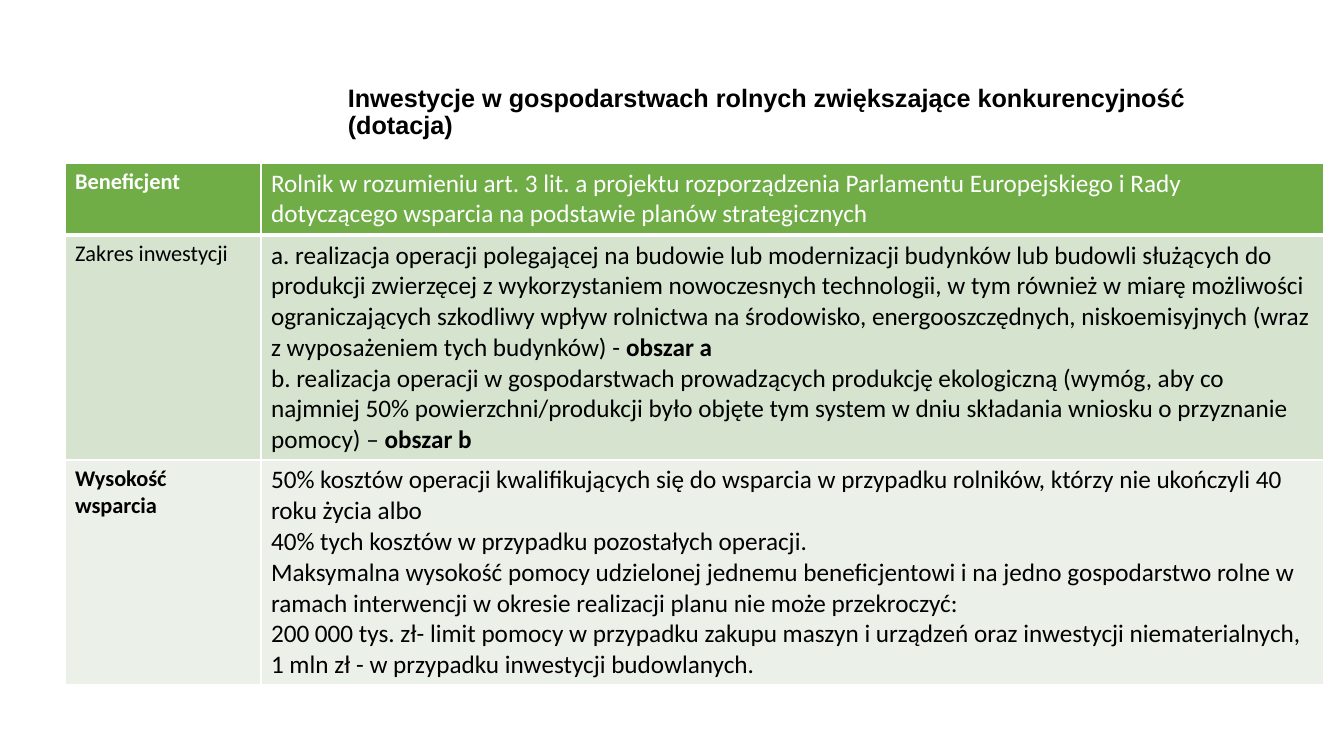
from lxml import etree
from pptx import Presentation
from pptx import util as u
from pptx.dml.color import RGBColor
from pptx.enum import text
from pptx.oxml.ns import qn

PX_PER_INCH = 100.8
WHITE, BLACK, GREEN = "FFFFFF", "000000", "70AD47"
PALE_GREEN, PALEST_GREEN = "D5E3CF", "EBF1E9"


def px(length):
    return u.Emu(round(length * 914400 / PX_PER_INCH))


def colour(value):
    return RGBColor.from_string(value)


def apply(target, values):
    for name, value in values.items():
        setattr(target, name, value)


class SlideBuilder:
    def __init__(self, presentation):
        self.slide = presentation.slides.add_slide(presentation.slide_layouts[6])

    def paragraphs(self, frame, paragraphs, font, ink):
        """Fill a frame; each paragraph is a list of (words, bold) runs."""
        for index, runs in enumerate(paragraphs):
            paragraph = frame.add_paragraph() if index else frame.paragraphs[0]
            for words, bold in runs:
                run = paragraph.add_run()
                run.text = words
                apply(run.font, {**font, "bold": bold})
                run.font.color.rgb = colour(ink)

    def title(self, words, box):
        shape = self.slide.shapes.add_textbox(*map(px, box))
        frame = shape.text_frame
        apply(frame, {"word_wrap": True, "vertical_anchor": text.MSO_ANCHOR.MIDDLE})
        self.paragraphs(frame, [[(words, True)]], {"name": "Arial", "size": u.Pt(18)}, BLACK)
        frame.paragraphs[0].line_spacing = 0.9

    def borders(self, cell, widths):
        """Draw white cell borders, given side letter to width in points."""
        properties = cell._tc.get_or_add_tcPr()
        for side, width in widths.items():
            line = etree.SubElement(properties, qn(f"a:ln{side}"), w=str(u.Pt(width)))
            fill = etree.SubElement(line, qn("a:solidFill"))
            etree.SubElement(fill, qn("a:srgbClr"), val=WHITE)

    def table(self, corner, widths, heights, rows):
        """Draw rows given as (fill, ink, label paragraphs, detail paragraphs)."""
        frame = self.slide.shapes.add_table(
            len(rows), len(widths), *map(px, (*corner, sum(widths), sum(heights))))
        table = frame.table
        for column, width in zip(table.columns, widths):
            column.width = px(width)
        for index, (fill, ink, *contents) in enumerate(rows):
            table.rows[index].height = px(heights[index])
            for cell, content, size in zip(table.rows[index].cells, contents, (16, 18)):
                self.borders(cell, {"L": 1, "R": 1, "T": 3 if index == 1 else 1,
                                    "B": 3 if index == 0 else 1})
                cell.fill.solid()
                cell.fill.fore_color.rgb = colour(fill)
                self.paragraphs(cell.text_frame, content,
                                {"name": "Calibri", "size": u.Pt(size)}, ink)


ROWS = [
    (GREEN, WHITE,
     [[("Beneficjent", True)]],
     [[("Rolnik w rozumieniu art. 3 lit. a projektu rozporządzenia Parlamentu Europejskiego "
        "i Rady dotyczącego wsparcia na podstawie planów strategicznych", False)]]),
    (PALE_GREEN, BLACK,
     [[("Zakres inwestycji", False)]],
     [[("a. realizacja operacji polegającej na budowie lub modernizacji budynków lub budowli "
        "służących do produkcji zwierzęcej z wykorzystaniem nowoczesnych technologii, w tym "
        "również w miarę możliwości ograniczających szkodliwy wpływ rolnictwa na środowisko, "
        "energooszczędnych, niskoemisyjnych (wraz z wyposażeniem tych budynków) - ", False),
       ("obszar a", True)],
      [("b. realizacja operacji w gospodarstwach prowadzących produkcję ekologiczną (wymóg, "
        "aby co najmniej 50% powierzchni/produkcji było objęte tym system w dniu składania "
        "wniosku o przyznanie pomocy) – ", False),
       ("obszar b", True)]]),
    (PALEST_GREEN, BLACK,
     [[("Wysokość wsparcia", True)]],
     [[(words, False)] for words in (
         "50% kosztów operacji kwalifikujących się do wsparcia w przypadku rolników, "
         "którzy nie ukończyli 40 roku życia albo",
         "40% tych kosztów w przypadku pozostałych operacji.",
         "Maksymalna wysokość pomocy udzielonej jednemu beneficjentowi i na jedno "
         "gospodarstwo rolne w ramach interwencji w okresie realizacji planu nie może "
         "przekroczyć:",
         "200 000 tys. zł- limit pomocy w przypadku zakupu maszyn i urządzeń oraz "
         "inwestycji niematerialnych,",
         "1 mln zł - w przypadku inwestycji budowlanych.")]),
]


def main():
    presentation = Presentation()
    apply(presentation, {"slide_width": px(1344), "slide_height": px(756)})
    builder = SlideBuilder(presentation)
    builder.title("Inwestycje w gospodarstwach rolnych zwiększające konkurencyjność (dotacja)",
                  (338, 40, 953, 146))
    builder.table((65, 163), (196, 1063), (72, 225, 225), ROWS)
    presentation.save("out.pptx")


if __name__ == "__main__":
    main()
